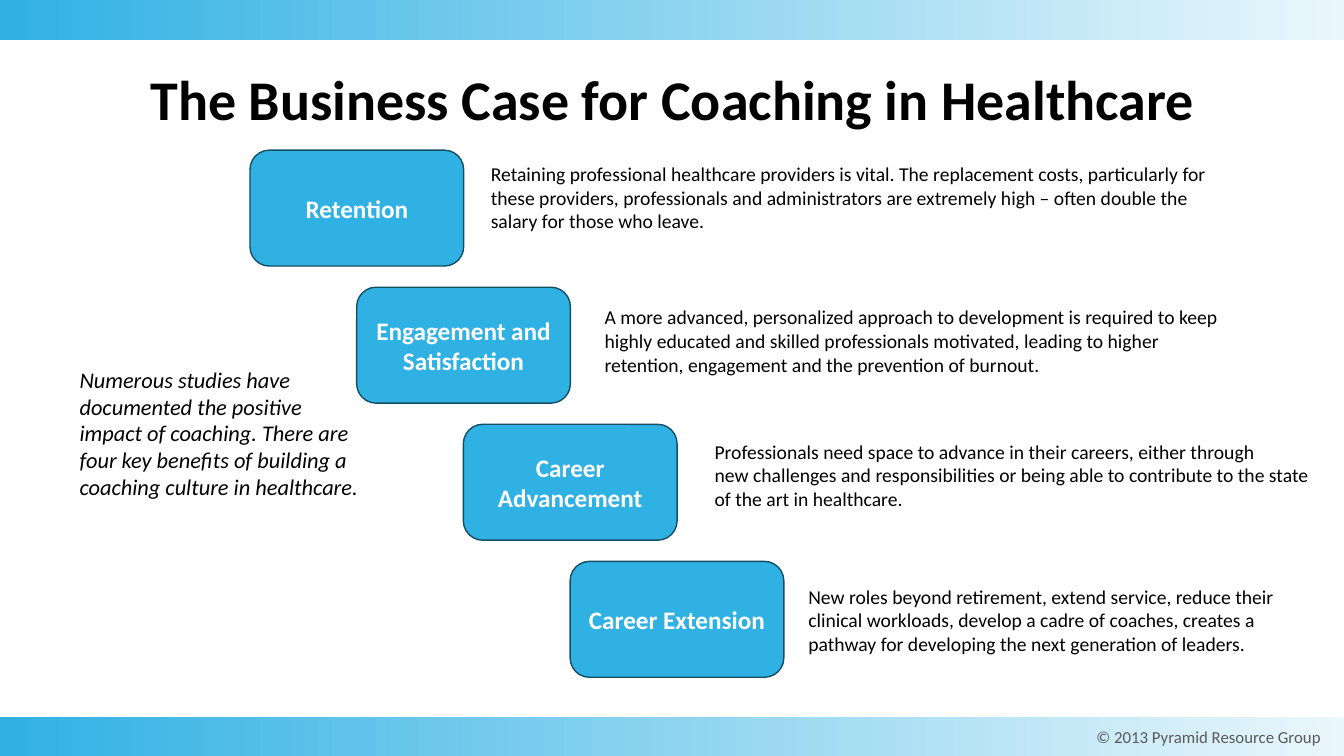
from pptx import Presentation
from pptx.dml.color import RGBColor
from pptx.enum.shapes import MSO_SHAPE
from pptx.enum.text import MSO_ANCHOR, PP_ALIGN
from pptx.util import Inches, Pt

RECT, ROUNDED = MSO_SHAPE.RECTANGLE, MSO_SHAPE.ROUNDED_RECTANGLE
TOP, MIDDLE = MSO_ANCHOR.TOP, MSO_ANCHOR.MIDDLE
LEFT, CENTER = PP_ALIGN.LEFT, PP_ALIGN.CENTER

COLORS = {
    "blue": "30B1E4",
    "pale": "EAF7FC",
    "edge": "154E64",
    "black": "000000",
    "white": "FFFFFF",
    "gray": "595959",
}

BENEFITS = [
    ("Retention", (35.78, 20.8, 56.1, 10.8), [
        "Retaining professional healthcare providers is vital. The replacement costs, "
        "particularly for these providers, professionals and administrators are extremely "
        "high – often double the salary for those who leave."]),
    ("Engagement and Satisfaction", (44.25, 39.73, 47.55, 10.8), [
        "A more advanced, personalized approach to development is required to keep highly "
        "educated and skilled professionals motivated, leading to higher retention, "
        "engagement and the prevention of burnout."]),
    ("Career Advancement", (52.43, 57.47, 47.55, 10.8), [
        "Professionals need space to advance in their careers, either through",
        "new challenges and responsibilities or being able to contribute to the state",
        "of the art in healthcare."]),
    ("Career Extension", (59.4, 76.67, 37.43, 10.8), [
        "New roles beyond retirement, extend service, reduce their clinical workloads, "
        "develop a cadre of coaches, creates a pathway for developing the next generation "
        "of leaders."]),
]


class SlideBuilder:
    font = "Calibri"

    def __init__(self, deck):
        self.deck = deck
        self.slide = deck.slides.add_slide(deck.slide_layouts[6])

    def color(self, name):
        return RGBColor.from_string(COLORS[name])

    def place(self, area):
        width, height = self.deck.slide_width, self.deck.slide_height
        return [int(share * side / 100)
                for share, side in zip(area, (width, height, width, height))]

    def add_lines(self, shape, lines, size, color, align=LEFT, anchor=TOP,
                  bold=False, italic=False, spacing=None):
        frame = shape.text_frame
        frame.word_wrap = True
        frame.vertical_anchor = anchor
        for index, line in enumerate(lines):
            para = frame.add_paragraph() if index else frame.paragraphs[0]
            para.alignment = align
            para.line_spacing = spacing
            span = para.add_run()
            span.text = line
            span.font.name = self.font
            span.font.size = Pt(size)
            span.font.bold = bold
            span.font.italic = italic
            span.font.color.rgb = self.color(color)

    def band(self, top):
        band = self.slide.shapes.add_shape(RECT, *self.place((0, top, 100, 5.3)))
        band.shadow.inherit = False
        band.line.fill.background()
        band.fill.gradient()
        band.fill.gradient_angle = 0
        for stop, name in zip(band.fill.gradient_stops, ("blue", "pale")):
            stop.color.rgb = self.color(name)

    def text(self, area, lines, size, color="black", **style):
        box = self.slide.shapes.add_textbox(*self.place(area))
        self.add_lines(box, lines, size, color, **style)

    def card(self, area, label):
        card = self.slide.shapes.add_shape(ROUNDED, *self.place(area))
        card.shadow.inherit = False
        card.fill.solid()
        card.fill.fore_color.rgb = self.color("blue")
        card.line.color.rgb = self.color("edge")
        card.line.width = Pt(1)
        card.text_frame.margin_left = card.text_frame.margin_right = Inches(0.05)
        self.add_lines(card, [label], 18, "white", align=CENTER, anchor=MIDDLE, bold=True)


def main():
    deck = Presentation()
    deck.slide_width, deck.slide_height = Inches(13.33), Inches(7.5)
    page = SlideBuilder(deck)
    for top in (94.8, 0):
        page.band(top)
    page.text((79.88, 94.8, 20.1, 5.3), ["© 2013 Pyramid Resource Group"], 12, "gray",
              align=CENTER, anchor=MIDDLE)
    page.text((6.9, 4.93, 86.25, 17.33), ["The Business Case for Coaching in Healthcare"],
              40, align=CENTER, anchor=MIDDLE, bold=True, spacing=0.9)
    for step, (label, area, lines) in enumerate(BENEFITS):
        page.card((18.6 + 7.94 * step, 19.87 + 18.13 * step, 15.9, 15.33), label)
        page.text(area, lines, 14)
    page.text((5.18, 47.73, 22.58, 23.33), [
        "Numerous studies have documented the positive impact of coaching. There are four "
        "key benefits of building a coaching culture in healthcare."], 16, italic=True)
    deck.save("out.pptx")


if __name__ == "__main__":
    main()
